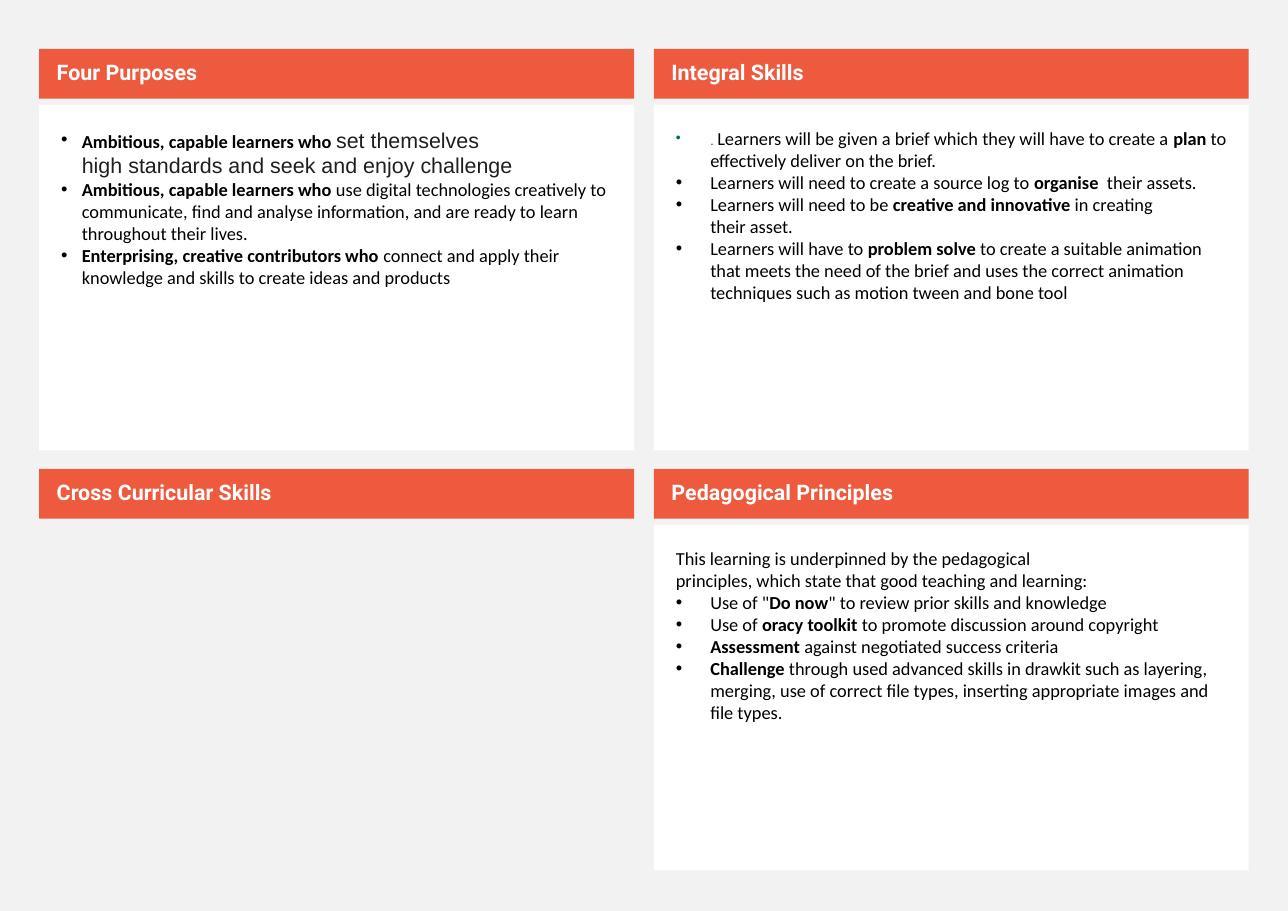
from dataclasses import dataclass

from lxml.etree import SubElement
from pptx import Presentation
from pptx.dml.color import RGBColor
from pptx.enum.shapes import MSO_SHAPE
from pptx.enum.text import MSO_ANCHOR, PP_ALIGN
from pptx.oxml.ns import qn
from pptx.shapes.autoshape import Shape
from pptx.slide import Slide
from pptx.util import Pt

COLOURS = {
    "background": "F2F2F2",
    "header": "ED5A3E",
    "panel": "FFFFFF",
    "header text": "FFFFFF",
    "body text": "000000",
    "grey text": "1F1F1F",
    "green text": "006758",
}

# Grid of two columns and two rows, in points
COLUMN_LEFTS = (25.6, 427.3)
ROW_TOPS = (32, 306.5)
PANEL_WIDTH = 388.8
HEADER_HEIGHT = 32.4
BODY_OFFSET = 36.4
BODY_HEIGHT = 226

# In the wording below, a tilde stands for a space that does not break
HARD_SPACE = chr(160)


@dataclass
class Words:
    text: str
    bold: bool = False
    size: float = 12
    font: str = "Calibri"
    colour: str = "body text"


@dataclass
class Item:
    words: list[Words]
    bulleted: bool = True


@dataclass
class Panel:
    title: str
    column: int
    row: int
    items: list[Item]
    indent: float = 22.5


def bold(text: str) -> Words:
    return Words(text, bold=True)


PANELS = [
    Panel("Four Purposes", 0, 0, indent=13.5, items=[
        Item([bold("Ambitious, capable learners who~"),
              Words("set themselves high~standards and seek and enjoy challenge",
                    size=14, font="Arial", colour="grey text")]),
        Item([bold("Ambitious, capable learners who"),
              Words("~use digital technologies~creatively to communicate, find and analyse "
                    "information,~and~are ready to learn throughout their lives.~")]),
        Item([bold("Enterprising, creative contributors who~"),
              Words("connect and apply~their knowledge and skills to create ideas "
                    "and products")]),
    ]),
    Panel("Cross Curricular Skills", 0, 1, items=[]),
    Panel("Integral Skills", 1, 0, items=[
        Item([Words(".~", size=9, font="Roboto", colour="green text"),
              Words("Learners will be given a brief which they will have to create a~"),
              bold("plan~"), Words("to effectively deliver on the~brief.~")]),
        Item([Words("Learners will need to create a source log to~"),
              bold("organise ~"), Words("their~assets.")]),
        Item([Words("Learners will need to be~"), bold("creative and innovative"),
              Words("~in~creating their~asset.")]),
        Item([Words("Learners will~have to"), bold("~problem solve"),
              Words("~to~create a suitable animation that~meets the need of the~brief~and "
                    "uses the~correct~animation techniques such as~motion tween "
                    "and bone~tool")]),
    ]),
    Panel("Pedagogical Principles", 1, 1, items=[
        Item([Words("This learning is underpinned by the pedagogical principles,~which~state"
                    "~that good teaching and learning:~")], bulleted=False),
        Item([Words('Use of "'), bold("Do now"),
              Words('" to~review prior skills and knowledge')]),
        Item([Words("Use of~"), bold("oracy toolkit~"),
              Words("to promote discussion around~copyright")]),
        Item([bold("Assessment~"), Words("against negotiated success criteria")]),
        Item([bold("Challenge~"),
              Words("through used advanced skills in drawkit~such as layering, merging,"
                    "~use of correct file~types,~inserting appropriate images "
                    "and file types.")]),
    ]),
]


def colour(name: str) -> RGBColor:
    return RGBColor.from_string(COLOURS[name])


def add_box(slide: Slide, left: float, top: float, height: float, fill: str,
            anchor: MSO_ANCHOR, insets: tuple[float, float, float, float]) -> Shape:
    shape = slide.shapes.add_shape(
        MSO_SHAPE.RECTANGLE, Pt(left), Pt(top), Pt(PANEL_WIDTH), Pt(height))
    shape.shadow.inherit = False
    shape.fill.solid()
    shape.fill.fore_color.rgb = colour(fill)
    shape.line.fill.background()
    frame = shape.text_frame
    frame.word_wrap = True
    frame.vertical_anchor = anchor
    frame.margin_left, frame.margin_top, frame.margin_right, frame.margin_bottom = map(Pt, insets)
    return shape


def add_words(paragraph, words: Words) -> None:
    run = paragraph.add_run()
    run.text = words.text.replace("~", HARD_SPACE)
    run.font.name = words.font
    run.font.size = Pt(words.size)
    run.font.bold = words.bold
    run.font.color.rgb = colour(words.colour)


def add_bullet(paragraph, indent: float) -> None:
    properties = paragraph._p.get_or_add_pPr()
    properties.set("marL", str(Pt(indent)))
    properties.set("indent", str(-Pt(indent)))
    SubElement(properties, qn("a:buFont"), typeface="Arial")
    SubElement(properties, qn("a:buChar"), char="•")


def add_panel(slide: Slide, panel: Panel) -> None:
    left, top = COLUMN_LEFTS[panel.column], ROW_TOPS[panel.row]

    # Header bar
    header = add_box(slide, left, top, HEADER_HEIGHT, "header",
                     MSO_ANCHOR.MIDDLE, (11.5, 3.6, 7.2, 3.6))
    paragraph = header.text_frame.paragraphs[0]
    paragraph.alignment = PP_ALIGN.LEFT
    paragraph.line_spacing = 0.9
    paragraph.space_before = Pt(11)
    add_words(paragraph, Words(panel.title, True, 14, "Roboto", "header text"))

    # Body, only where there is something to say
    if not panel.items:
        return
    body = add_box(slide, left, top + BODY_OFFSET, BODY_HEIGHT, "panel",
                   MSO_ANCHOR.TOP, (14.4, 14.4, 14.4, 14.4))
    frame = body.text_frame
    for index, item in enumerate(panel.items):
        paragraph = frame.add_paragraph() if index else frame.paragraphs[0]
        paragraph.alignment = PP_ALIGN.LEFT
        if item.bulleted:
            add_bullet(paragraph, panel.indent)
        for words in item.words:
            add_words(paragraph, words)


def main() -> None:
    presentation = Presentation()
    presentation.slide_width, presentation.slide_height = Pt(841.7), Pt(595.4)
    slide = presentation.slides.add_slide(presentation.slide_layouts[6])
    slide.background.fill.solid()
    slide.background.fill.fore_color.rgb = colour("background")
    for panel in PANELS:
        add_panel(slide, panel)
    presentation.save("out.pptx")


if __name__ == "__main__":
    main()
